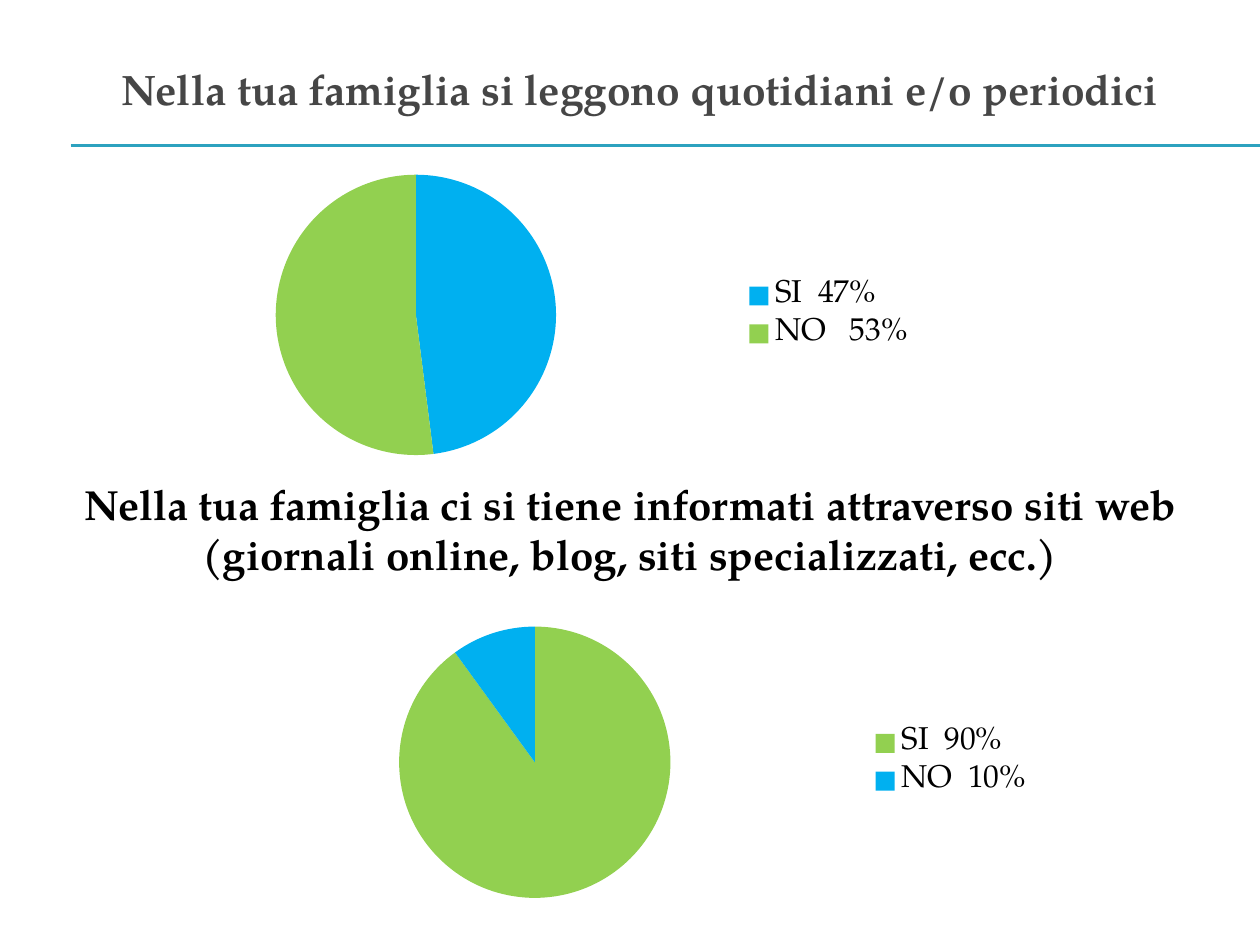
from lxml import etree
from pptx import Presentation
from pptx import util as u
from pptx.chart.data import CategoryChartData
from pptx.dml.color import RGBColor
from pptx.enum import chart as charts, shapes, text
from pptx.oxml import parse_xml
from pptx.oxml.ns import nsdecls, qn

FONT = "TeX Gyre Pagella"
COLORS = {"rule": "2DA2BF", "title": "464646", "body": "000000",
          "blue": "00B0F0", "green": "92D050"}

# Content: text, place, size, colour, anchor
HEADINGS = [
    ("Nella tua famiglia si leggono quotidiani e/o periodici",
     (0.33, 0.5, 9.5, 0.92), 24.3, "title", text.MSO_ANCHOR.TOP),
    ("Nella tua famiglia ci si tiene informati attraverso siti web "
     "(giornali online, blog, siti specializzati, ecc.)",
     (0, 3.44, 10, 1.51), 24, "body", text.MSO_ANCHOR.MIDDLE),
]
# Content: place, then label, value and colour of each slice
PIES = [
    ((0.7, 1.25, 6.67, 2.5), [("SI  47%", 48, "blue"), ("NO   53%", 52, "green")]),
    ((1.64, 4.84, 6.67, 2.42), [("SI  90%", 90, "green"), ("NO  10%", 10, "blue")]),
]
RULES_Y = [1.15, 1.16]
PIE_CENTER, PIE_DIAMETER = 0.39, 0.89  # shares of chart width and height


def color(name):
    return RGBColor.from_string(COLORS[name])


def inches(place):
    return [u.Inches(length) for length in place]


def add_rule(page, y):
    rule = page.shapes.add_connector(
        shapes.MSO_CONNECTOR.STRAIGHT, *inches((0.56, y, 10, y)))
    rule.line.color.rgb = color("rule")
    rule.line.width = u.Pt(0.75)
    etree.SubElement(rule.element.spPr, qn("a:effectLst"))


def add_heading(page, words, place, size, color_name, anchor):
    box = page.shapes.add_textbox(*inches(place))
    frame = box.text_frame
    frame.word_wrap = True
    frame.vertical_anchor = anchor
    if anchor == text.MSO_ANCHOR.TOP:
        frame.margin_top = 0
    para = frame.paragraphs[0]
    para.alignment = text.PP_ALIGN.CENTER
    span = para.add_run()
    span.text = words
    span.font.name = FONT
    span.font.size = u.Pt(size)
    span.font.bold = True
    span.font.color.rgb = color(color_name)


def place_pie(chart, width, height):
    """Fix the plot area as a square, left of the legend."""
    w, h = PIE_DIAMETER * height / width, PIE_DIAMETER
    layout = {"x": PIE_CENTER - w / 2, "y": (1 - h) / 2, "w": w, "h": h}
    values = "".join(f'<c:{key} val="{value:.3f}"/>' for key, value in layout.items())
    plot_area = chart.element.find(".//" + qn("c:plotArea"))
    for old in plot_area.findall(qn("c:layout")):
        plot_area.remove(old)
    plot_area.insert(0, parse_xml(
        f'<c:layout {nsdecls("c")}><c:manualLayout><c:layoutTarget val="inner"/>'
        f'<c:xMode val="edge"/><c:yMode val="edge"/>{values}'
        '</c:manualLayout></c:layout>'))


def add_pie(page, place, slices):
    labels, values, color_names = zip(*slices)
    data = CategoryChartData()
    data.categories = labels
    data.add_series("Series 1", values)
    chart = page.shapes.add_chart(
        charts.XL_CHART_TYPE.PIE, *inches(place), data).chart
    chart.has_title = False
    chart.font.name = FONT
    chart.font.size = u.Pt(18)
    chart.font.color.rgb = color("body")
    chart.has_legend = True
    chart.legend.position = charts.XL_LEGEND_POSITION.RIGHT
    chart.legend.include_in_layout = True
    series = chart.plots[0].series[0]
    for index, name in enumerate(color_names):
        fill = series.points[index].format.fill
        fill.solid()
        fill.fore_color.rgb = color(name)
    place_pie(chart, *place[2:])


def main():
    deck = Presentation()
    deck.slide_width, deck.slide_height = u.Inches(10), u.Inches(7.5)
    page = deck.slides.add_slide(deck.slide_layouts[6])

    # Double rule under the title
    for y in RULES_Y:
        add_rule(page, y)
    # Each question with its pie
    for heading, pie in zip(HEADINGS, PIES):
        add_heading(page, *heading)
        add_pie(page, *pie)

    deck.save("out.pptx")


if __name__ == "__main__":
    main()
